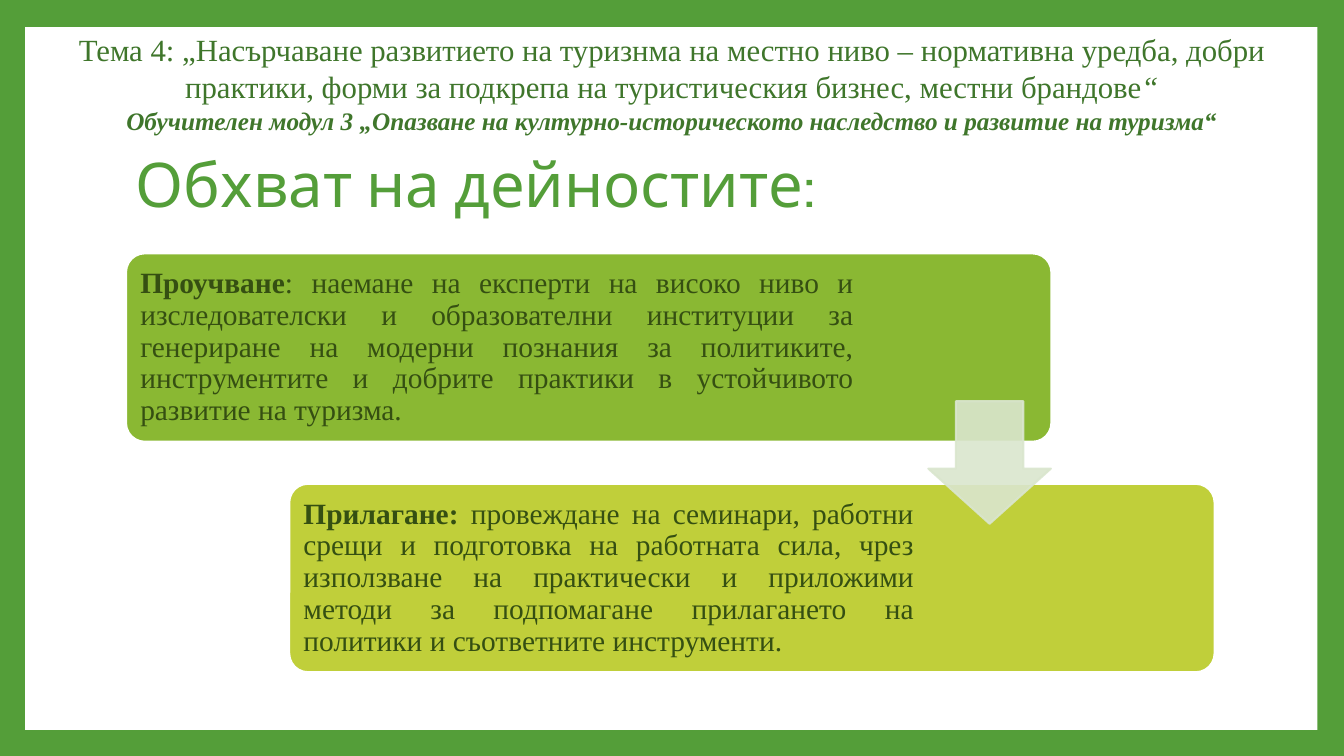
import pptx
import pptx.dml.color
import pptx.enum.shapes
import pptx.enum.text
import pptx.oxml
import pptx.oxml.ns
import pptx.util

Pt = pptx.util.Pt
Shapes = pptx.enum.shapes.MSO_SHAPE
Align = pptx.enum.text.PP_ALIGN
Anchor = pptx.enum.text.MSO_ANCHOR

COLORS = {
    "frame": "549E39",
    "paper": "FFFFFF",
    "research": "8AB833",
    "practice": "C0CF3A",
    "arrow": "DAE6CE",
    "body": "354F12",
    "header": "3F762B",
}
SERIF = "Times New Roman"


class SlideBuilder:
    """Draws styled elements on one slide, with all lengths in points."""

    def __init__(self, presentation):
        self.slide = presentation.slides.add_slide(presentation.slide_layouts[6])

    def color(self, name):
        return pptx.dml.color.RGBColor.from_string(COLORS[name])

    def background(self, name):
        fill = self.slide.background.fill
        fill.solid()
        fill.fore_color.rgb = self.color(name)

    def shape(self, kind, box, fill, line=None, adjustments=(), opacity=None):
        shape = self.slide.shapes.add_shape(kind, *map(Pt, box))
        shape.shadow.inherit = False
        for index, value in enumerate(adjustments):
            shape.adjustments[index] = value
        shape.fill.solid()
        shape.fill.fore_color.rgb = self.color(fill)
        if line:
            shape.line.color.rgb = self.color(line)
            shape.line.width = Pt(1.5)
        else:
            shape.line.fill.background()
        if opacity:
            for color in shape.element.spPr.iter(pptx.oxml.ns.qn("a:srgbClr")):
                alpha = pptx.oxml.parse_xml(
                    f'<a:alpha {pptx.oxml.ns.nsdecls("a")} val="{opacity * 1000}"/>'
                )
                color.append(alpha)

    def text(self, box, lines, color, frame_format, paragraph_format, inset=None):
        frame = self.slide.shapes.add_textbox(*map(Pt, box)).text_frame
        frame.word_wrap = True
        for name, value in frame_format.items():
            setattr(frame, name, value)
        if inset is not None:
            for side in ("left", "top", "right", "bottom"):
                setattr(frame, f"margin_{side}", Pt(inset))
        paragraph = frame.paragraphs[0]
        for name, value in paragraph_format.items():
            setattr(paragraph, name, value)
        for number, runs in enumerate(lines):
            if number:
                paragraph.add_line_break()
            for content, font_format in runs:
                run = paragraph.add_run()
                run.text = content
                run.font.color.rgb = self.color(color)
                for name, value in font_format.items():
                    setattr(run.font, name, value)

    def step(self, left, top, text_width, fill, heading, body):
        self.shape(Shapes.ROUNDED_RECTANGLE, (left, top, 661, 134.6), fill, "paper", [0.1])
        font = {"name": SERIF, "size": Pt(21)}
        self.text(
            (left + 3.9, top + 3.9, text_width, 126.8),
            [[(heading, {**font, "bold": True}), (body, font)]],
            "body",
            {"vertical_anchor": Anchor.MIDDLE},
            {"alignment": Align.JUSTIFY, "line_spacing": 0.9},
            6.3,
        )


def main():
    presentation = pptx.Presentation()
    presentation.slide_width = Pt(960)
    presentation.slide_height = Pt(540)
    builder = SlideBuilder(presentation)
    builder.background("frame")
    builder.shape(Shapes.RECTANGLE, (18, 19.4, 923, 502), "paper")
    builder.text(
        (90, 103.7, 777.6, 61.2),
        [[("Обхват на дейностите:", {"name": "Cabin", "size": Pt(44)})]],
        "frame",
        {"vertical_anchor": Anchor.MIDDLE},
        {"line_spacing": 0.9},
    )
    builder.step(
        90, 181, 522, "research", "Проучване",
        ": наемане на експерти на високо ниво и изследователски и образователни "
        "институции за генериране на модерни познания за политиките, инструментите "
        "и добрите практики в устойчивото развитие на туризма.",
    )
    builder.step(
        206.6, 345.6, 448.6, "practice", "Прилагане:",
        " провеждане на семинари, работни срещи и подготовка на работната сила, чрез "
        "използване на практически и приложими методи за подпомагане прилагането на "
        "политики и съответните инструменти.",
    )
    builder.shape(
        Shapes.DOWN_ARROW, (663.1, 286.6, 87.5, 87.5), "arrow", "arrow", [0.55, 0.45], 90
    )
    topic = {"name": SERIF, "size": Pt(22)}
    module = {"name": SERIF, "size": Pt(18), "bold": True, "italic": True}
    builder.text(
        (26.6, 18.7, 906.5, 85),
        [
            [
                ("Тема 4: „Насърчаване развитието на туризнма на местно ниво – нормативна "
                 "уредба, добри практики, форми за подкрепа на туристическия бизнес, "
                 "местни брандове", topic),
                ("“", {**topic, "italic": True}),
            ],
            [("Обучителен модул 3 „Опазване на културно-историческото наследство и "
              "развитие на туризма“", module)],
        ],
        "header",
        {"vertical_anchor": Anchor.TOP},
        {"alignment": Align.CENTER},
    )
    presentation.save("out.pptx")


if __name__ == "__main__":
    main()
